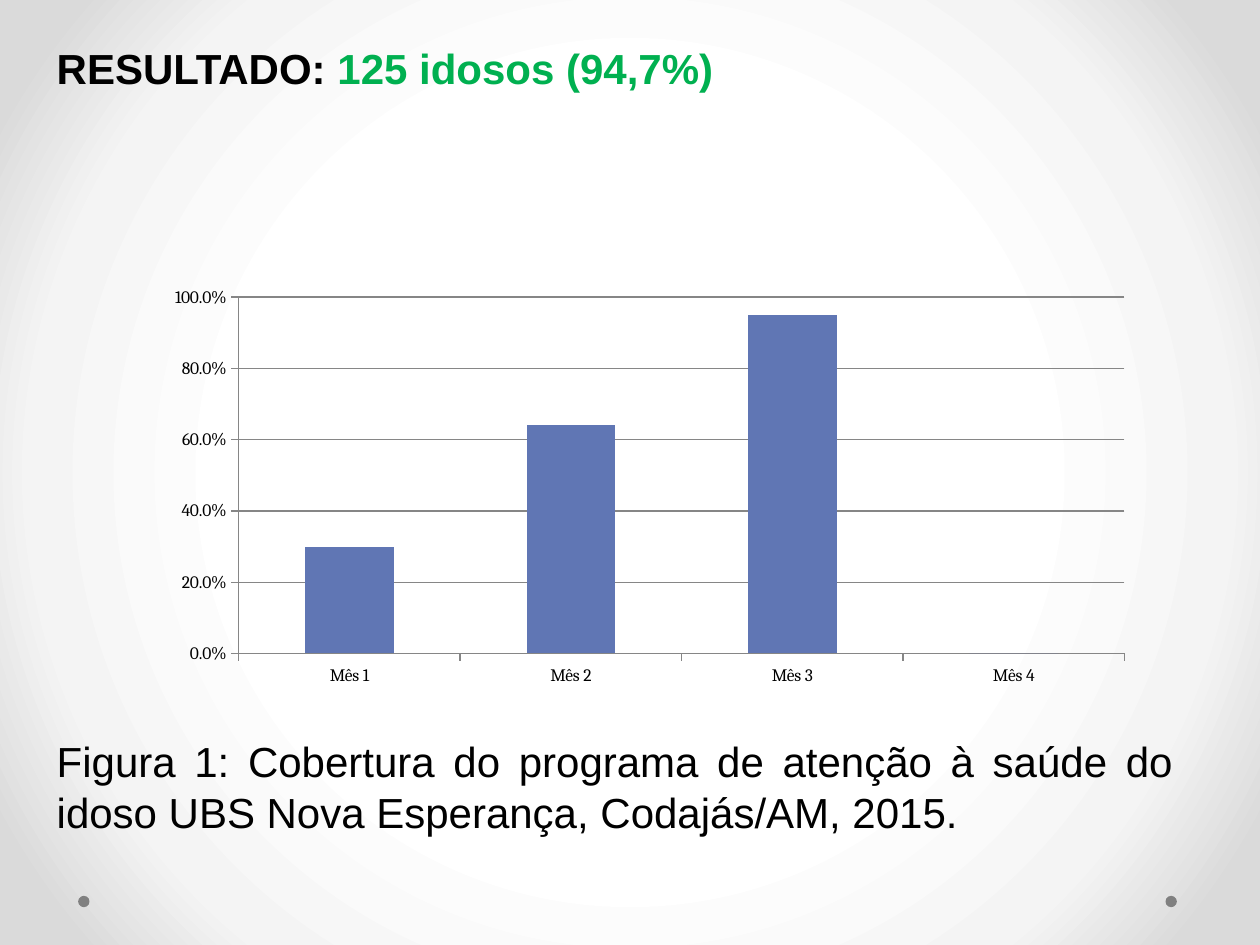
from lxml.etree import SubElement
from pptx import Presentation
from pptx.chart.data import CategoryChartData
from pptx.dml.color import RGBColor
from pptx.enum.chart import XL_CHART_TYPE, XL_TICK_MARK
from pptx.enum.shapes import MSO_SHAPE
from pptx.enum.text import MSO_ANCHOR, MSO_AUTO_SIZE, PP_ALIGN
from pptx.oxml import parse_xml
from pptx.oxml.ns import nsdecls, qn
from pptx.util import Inches, Pt

HEADING = [("RESULTADO: ", "000000"), ("125 idosos (94,7%)", "00B050")]
CAPTION = [("Figura 1: Cobertura do programa de atenção à saúde do idoso "
            "UBS Nova Esperança, Codajás/AM, 2015.", "000000")]
COVERAGE = {"Mês 1": 0.3, "Mês 2": 0.64, "Mês 3": 0.95, "Mês 4": 0}
BACKGROUND = [(50, "FFFFFF"), (76, "F4F4F4"), (92, "DADADA")]
PLOT = {"x": 0.14, "y": 0.282, "w": 0.86, "h": 0.619}
HEADING_BOX = (0.35, 0.29, 9.06, 0.6)
CAPTION_BOX = (0.35, 5.79, 9.06, 0.95)
CHART_BOX = (0.75, 1.07, 8.18, 4.57)
DOT_LEFTS, DOT_TOP, DOT_SIZE = (0.62, 9.25), 7.11, 0.09


def rgb(value):
    """Turn a hex string into a colour."""
    return RGBColor.from_string(value)


def apply(target, values):
    """Set each attribute in values on target."""
    for name, value in values.items():
        setattr(target, name, value)


def place(shape, box):
    """Move a shape to a box given in inches."""
    apply(shape, dict(zip(("left", "top", "width", "height"), map(Inches, box))))


def set_background(s):
    """Give the slide a circular gradient."""
    stops = "".join(f'<a:gs pos="{pos * 1000}"><a:srgbClr val="{color}"/></a:gs>'
                    for pos, color in BACKGROUND)
    s.background.fill.solid()
    bg_pr = s.background.fill._xPr
    bg_pr.replace(bg_pr[0], parse_xml(
        f'<a:gradFill {nsdecls("a")} rotWithShape="1"><a:gsLst>{stops}</a:gsLst>'
        '<a:path path="circle"><a:fillToRect l="50000" t="50000" r="50000" b="50000"/>'
        '</a:path></a:gradFill>'))


def write(shape, box, runs, bold, align):
    """Fill a placeholder with one formatted paragraph."""
    place(shape, box)
    tf = shape.text_frame
    apply(tf, {"word_wrap": True, "auto_size": MSO_AUTO_SIZE.NONE,
               "vertical_anchor": MSO_ANCHOR.TOP})
    p = tf.paragraphs[0]
    apply(p, {"alignment": align, "space_before": Pt(0)})
    p_pr = p._p.get_or_add_pPr()
    p_pr.set("marL", "0")
    p_pr.set("indent", "0")
    SubElement(p_pr, qn("a:buNone"))
    for text, color in runs:
        r = p.add_run()
        r.text = text
        apply(r.font, {"name": "Arial", "size": Pt(24), "bold": bold})
        r.font.color.rgb = rgb(color)


def add_coverage_chart(s):
    """Add the monthly coverage columns."""
    data = CategoryChartData(number_format="0.0%")
    data.categories = list(COVERAGE)
    data.add_series("Series 1", list(COVERAGE.values()))
    chart = s.shapes.add_chart(XL_CHART_TYPE.COLUMN_CLUSTERED,
                               *map(Inches, CHART_BOX), data).chart
    apply(chart, {"has_legend": False, "has_title": False})
    apply(chart.font, {"name": "Cambria", "size": Pt(10)})
    chart.font.color.rgb = rgb("000000")
    plot = chart.plots[0]
    apply(plot, {"gap_width": 150, "vary_by_categories": False})
    fill = plot.series[0].format.fill
    fill.solid()
    fill.fore_color.rgb = rgb("6076B4")

    axis = chart.value_axis
    apply(axis, {"minimum_scale": 0, "maximum_scale": 1, "major_unit": 0.2,
                 "has_major_gridlines": True})
    apply(axis.tick_labels, {"number_format": "0.0%", "number_format_is_linked": False})
    for ax in (axis, chart.category_axis):
        ax.major_tick_mark = XL_TICK_MARK.OUTSIDE
    for part in (axis, chart.category_axis, axis.major_gridlines):
        part.format.line.width = Pt(0.75)
        part.format.line.color.rgb = rgb("868686")

    area = chart._chartSpace.chart.plotArea
    for old in area.findall(qn("c:layout")):
        area.remove(old)
    modes = '<c:xMode val="edge"/><c:yMode val="edge"/>'
    sizes = "".join(f'<c:{key} val="{value}"/>' for key, value in PLOT.items())
    area.insert(0, parse_xml(
        f'<c:layout {nsdecls("c")}><c:manualLayout><c:layoutTarget val="inner"/>'
        f'{modes}{sizes}</c:manualLayout></c:layout>'))


def add_dot(s, left):
    """Add one grey footer dot."""
    dot = s.shapes.add_shape(MSO_SHAPE.OVAL, *map(Inches, (left, DOT_TOP, DOT_SIZE, DOT_SIZE)))
    dot.shadow.inherit = False
    dot.fill.solid()
    dot.fill.fore_color.rgb = rgb("808080")
    dot.line.fill.background()


def main():
    """Build and save the slide."""
    prs = Presentation()
    apply(prs, {"slide_width": Inches(10), "slide_height": Inches(7.5)})
    s = prs.slides.add_slide(prs.slide_layouts[1])
    set_background(s)
    for left in DOT_LEFTS:
        add_dot(s, left)
    write(s.shapes.title, HEADING_BOX, HEADING, True, PP_ALIGN.LEFT)
    write(s.placeholders[1], CAPTION_BOX, CAPTION, False, PP_ALIGN.JUSTIFY)
    add_coverage_chart(s)
    prs.save("out.pptx")


if __name__ == "__main__":
    main()
